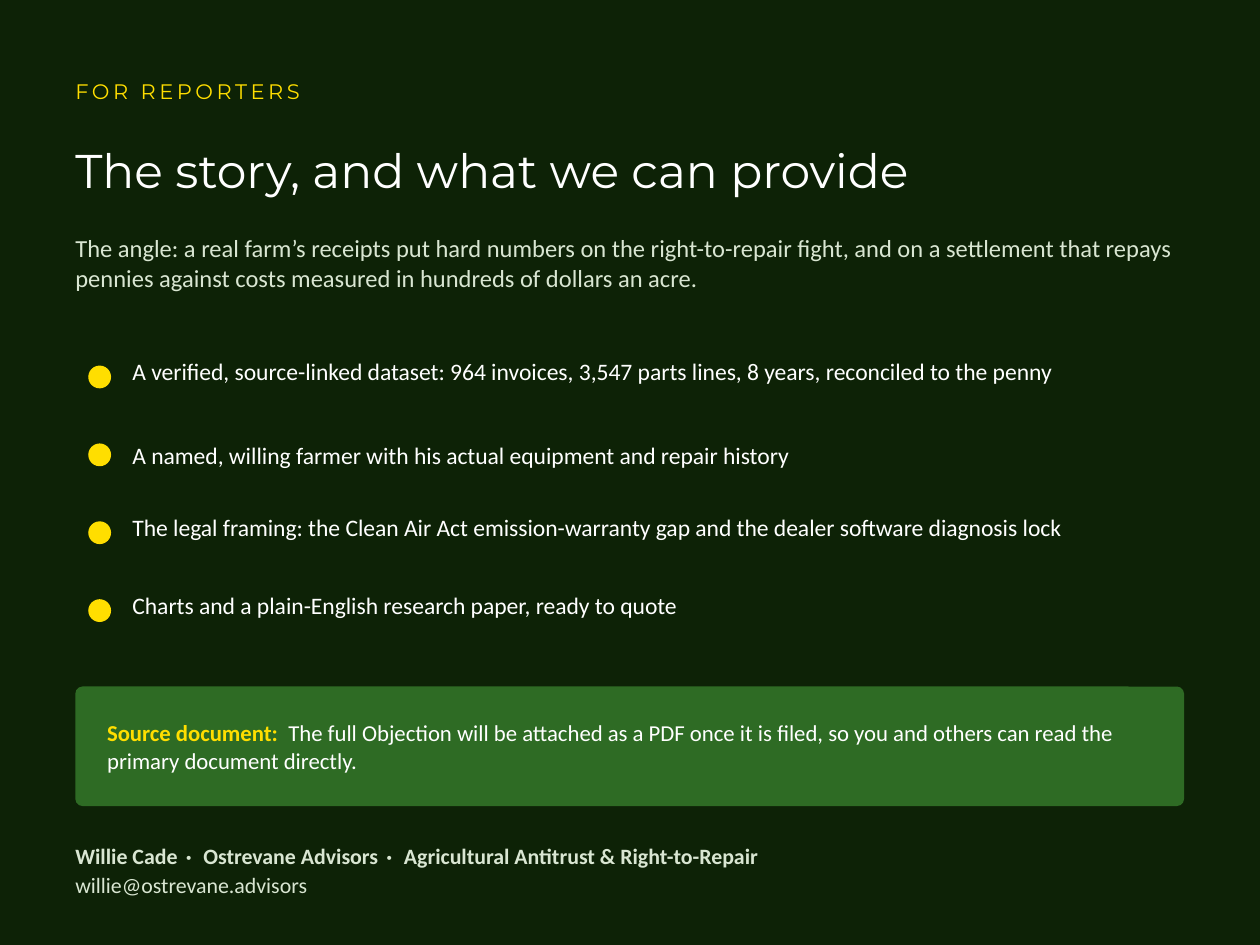
from pptx import Presentation
from pptx.util import Cm, Pt
from pptx.dml.color import RGBColor
from pptx.enum import shapes, text

COLORS = {"bg": "0D2206", "yellow": "FFDE00", "white": "FFFFFF",
          "pale": "D9E6D2", "green": "2E6B24"}
LEFT, WIDTH = 1.52, 22.35
TOP, MIDDLE = text.MSO_ANCHOR.TOP, text.MSO_ANCHOR.MIDDLE


def rgb(name):
    return RGBColor.from_string(COLORS[name])


def write(sp, paragraphs, size, color, font="Calibri", anchor=TOP):
    """Each paragraph is a list of runs: (text, bold, color or None, spacing in pt)."""
    tf = sp.text_frame
    tf.word_wrap = True
    tf.auto_size = text.MSO_AUTO_SIZE.NONE
    tf.vertical_anchor = anchor
    tf.margin_left = tf.margin_right = tf.margin_top = tf.margin_bottom = 0
    for i, runs in enumerate(paragraphs):
        p = tf.paragraphs[0] if i == 0 else tf.add_paragraph()
        p.alignment = text.PP_ALIGN.LEFT
        p.font.name, p.font.size = font, Pt(size)
        p.font.color.rgb = rgb(color)
        for words, bold, run_color, spacing in runs:
            r = p.add_run()
            r.text = words
            r.font.name, r.font.size, r.font.bold = font, Pt(size), bold
            r.font.color.rgb = rgb(run_color or color)
            if spacing:
                r.font._element.set("spc", str(int(spacing * 100)))
    return tf


prs = Presentation()
prs.slide_width, prs.slide_height = Cm(25.4), Cm(19.05)
s = prs.slides.add_slide(prs.slide_layouts[5])
s.background.fill.solid()
s.background.fill.fore_color.rgb = rgb("bg")

# Kicker, title and angle
sp = s.shapes.add_textbox(Cm(LEFT), Cm(1.4), Cm(22.86), Cm(0.89))
write(sp, [[("FOR REPORTERS", False, None, 2)]], 12, "yellow", "Montserrat", MIDDLE)

sp = s.shapes.title
sp.left, sp.top, sp.width, sp.height = Cm(LEFT), Cm(2.41), Cm(22.86), Cm(2.03)
write(sp, [[("The story, and what we can provide", False, None, 0)]],
      27, "white", "Montserrat", MIDDLE)

sp = s.shapes.add_textbox(Cm(LEFT), Cm(4.7), Cm(WIDTH), Cm(2.16))
write(sp, [[("The angle: a real farm’s receipts put hard numbers on the right-to-repair "
             "fight, and on a settlement that repays pennies against costs measured in "
             "hundreds of dollars an acre.", False, None, 0)]], 14, "pale")

# Offers, each with a yellow dot
offers = [
    (7.19, "A verified, source-linked dataset: 964 invoices, 3,547 parts lines, 8 years, "
           "reconciled to the penny"),
    (8.89, "A named, willing farmer with his actual equipment and repair history"),
    (10.34, "The legal framing: the Clean Air Act emission-warranty gap and the "
            "dealer software diagnosis lock"),
    (11.91, "Charts and a plain-English research paper, ready to quote"),
]
for i, (top, offer) in enumerate(offers):
    dot = s.shapes.add_shape(shapes.MSO_SHAPE.OVAL, Cm(1.78), Cm(7.37 + 1.57 * i),
                             Cm(0.46), Cm(0.46))
    dot.shadow.inherit = False
    dot.fill.solid()
    dot.fill.fore_color.rgb = rgb("yellow")
    dot.line.fill.background()
    sp = s.shapes.add_textbox(Cm(2.67), Cm(top), Cm(21.08), Cm(1.27))
    write(sp, [[(offer, False, None, 0)]], 13.5, "white")

# Source document panel
panel = s.shapes.add_shape(shapes.MSO_SHAPE.ROUNDED_RECTANGLE, Cm(LEFT), Cm(13.84),
                           Cm(WIDTH), Cm(2.41))
panel.adjustments[0] = 0.06
panel.shadow.inherit = False
panel.fill.solid()
panel.fill.fore_color.rgb = rgb("green")
panel.line.fill.background()
sp = s.shapes.add_textbox(Cm(2.16), Cm(13.84), Cm(21.08), Cm(2.41))
write(sp, [[("Source document:", True, "yellow", 0), (" ", True, None, 3),
            ("The full Objection will be attached as a PDF once it is filed, so you and "
             "others can read the primary document directly.", False, None, 0)]],
      13, "white", anchor=MIDDLE)

# Contact
dot_gap = (" · ", True, None, 1.9)
sp = s.shapes.add_textbox(Cm(LEFT), Cm(16.76), Cm(WIDTH), Cm(1.52))
tf = write(sp, [[("Willie Cade", True, None, 0), dot_gap,
                 ("Ostrevane Advisors", True, None, 0), dot_gap,
                 ("Agricultural Antitrust & Right-to-Repair", True, None, 0)],
                [("willie@ostrevane.advisors", False, None, 0)]],
           12.5, "pale", anchor=MIDDLE)
for p in tf.paragraphs:
    p.line_spacing = 1.1

prs.save("out.pptx")
